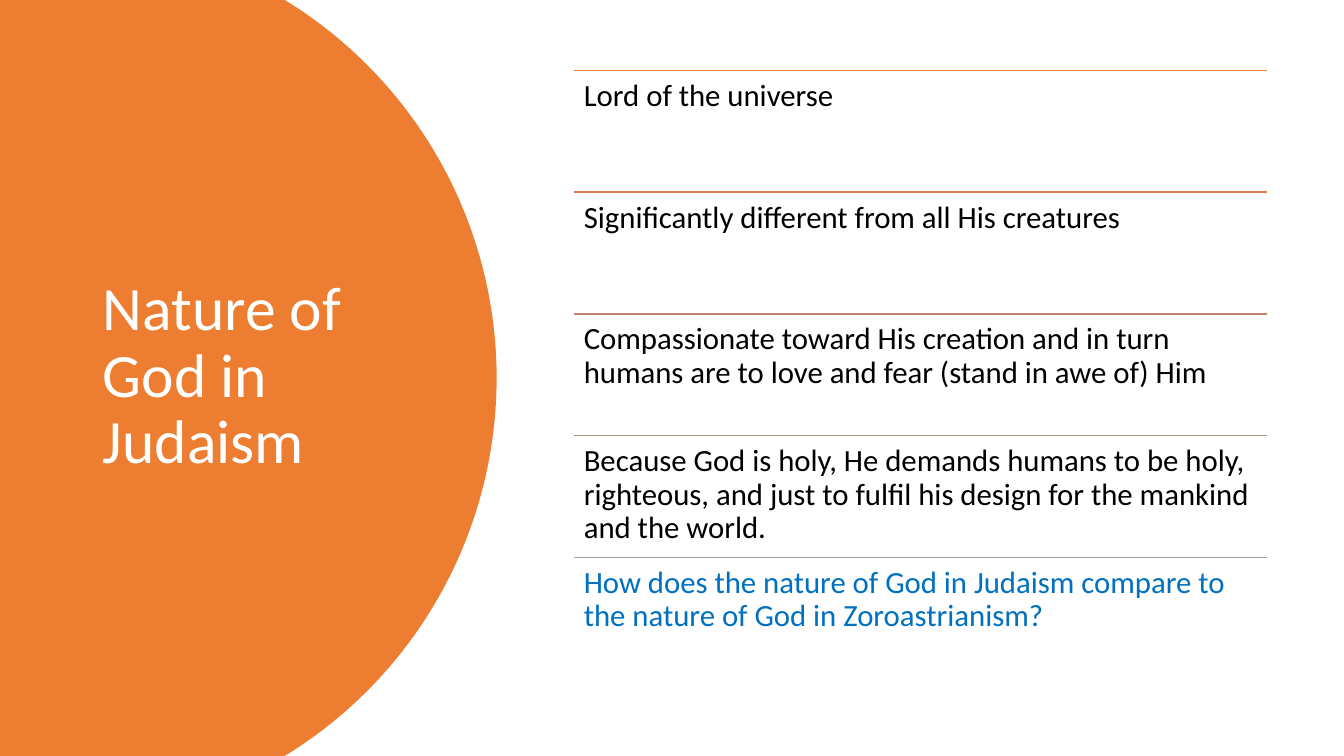
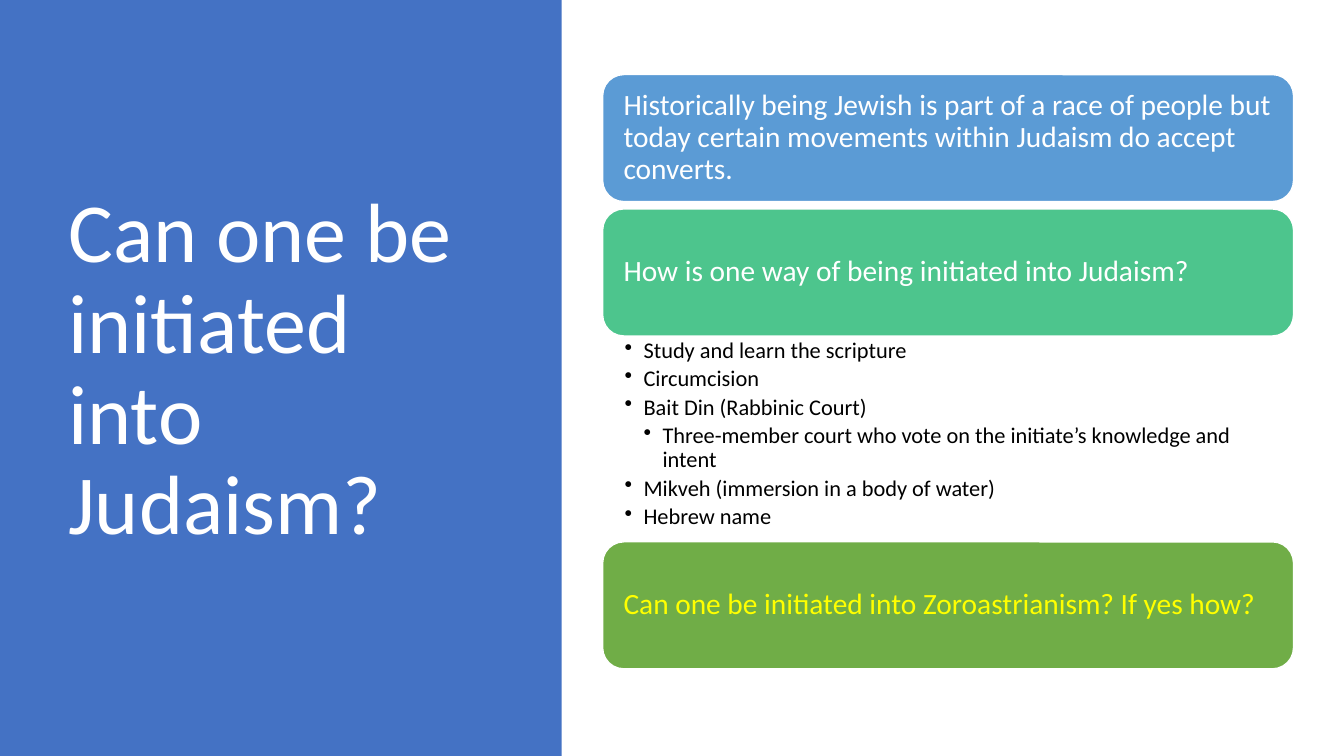
from math import asin, cos, sin

from lxml import etree
from pptx import Presentation
from pptx.dml.color import RGBColor
from pptx.enum.shapes import MSO_CONNECTOR, MSO_SHAPE
from pptx.enum.text import MSO_ANCHOR, MSO_AUTO_SIZE, PP_ALIGN
from pptx.oxml.ns import qn
from pptx.util import Emu, Pt

LINE = MSO_CONNECTOR.STRAIGHT
RECT = MSO_SHAPE.RECTANGLE
ROUND = MSO_SHAPE.ROUNDED_RECTANGLE
TOP = MSO_ANCHOR.TOP
MIDDLE = MSO_ANCHOR.MIDDLE
FIXED = MSO_AUTO_SIZE.NONE
LEFT = PP_ALIGN.LEFT

FONT = "Calibri"
WHITE = RGBColor(0xFF, 0xFF, 0xFF)
BLACK = RGBColor(0x00, 0x00, 0x00)
ORANGE = RGBColor(0xED, 0x7D, 0x31)
RUST = RGBColor(0xD8, 0x7A, 0x51)
CLAY = RGBColor(0xC4, 0x81, 0x70)
MAUVE = RGBColor(0xB4, 0x90, 0x8B)
GRAY = RGBColor(0xA5, 0xA5, 0xA5)
INK = RGBColor(0x00, 0x70, 0xC0)
BLUE = RGBColor(0x44, 0x72, 0xC4)
SKY = RGBColor(0x5B, 0x9B, 0xD5)
MINT = RGBColor(0x4D, 0xC5, 0x8D)
GREEN = RGBColor(0x70, 0xAD, 0x47)
YELLOW = RGBColor(0xFF, 0xFF, 0x00)

WIDTH, HEIGHT = 1280, 720
INDENT = 18

TRAITS = [
    ("Lord of the universe", ORANGE, BLACK),
    ("Significantly different from all His creatures", RUST, BLACK),
    ("Compassionate toward His creation and in turn humans are to love "
     "and fear (stand in awe of) Him", CLAY, BLACK),
    ("Because God is holy, He demands humans to be holy, righteous, and just "
     "to fulfil his design for the mankind and the world.", MAUVE, BLACK),
    ("How does the nature of God in Judaism compare to the nature of God "
     "in Zoroastrianism?", GRAY, INK),
]
STEPS = [
    ("Study and learn the scripture", 0),
    ("Circumcision", 0),
    ("Bait Din (Rabbinic Court)", 0),
    ("Three-member court who vote on the initiate’s knowledge and intent", 1),
    ("Mikveh (immersion in a body of water)", 0),
    ("Hebrew name", 0),
]


def px(count):
    return Emu(round(count * 9525))


def place(left, top, width, height):
    return px(left), px(top), px(width), px(height)


def bullet(para, level):
    para.level = level
    props = para._p.get_or_add_pPr()
    props.set("marL", str(px(INDENT * (level + 1))))
    props.set("indent", str(-px(INDENT)))
    etree.SubElement(props, qn("a:buChar")).set("char", "•")


def write(shape, items, size, color=BLACK, anchor=TOP, inset=(9, 9, 9, 9), after=0):
    frame = shape.text_frame
    frame.word_wrap = True
    frame.auto_size = FIXED
    frame.vertical_anchor = anchor
    (frame.margin_left, frame.margin_top,
     frame.margin_right, frame.margin_bottom) = map(px, inset)
    if isinstance(items, str):
        items = [(items, None)]
    for index, (text, level) in enumerate(items):
        para = frame.add_paragraph() if index else frame.paragraphs[0]
        if level is not None:
            bullet(para, level)
        para.alignment = LEFT
        para.line_spacing = 0.9
        para.space_before = Pt(0)
        para.space_after = Pt(after)
        run = para.add_run()
        run.text = text
        run.font.name = FONT
        run.font.size = Pt(size)
        run.font.color.rgb = color


def paint(shape, fill, edge=None):
    shape.shadow.inherit = False
    shape.fill.solid()
    shape.fill.fore_color.rgb = fill
    if edge is None:
        shape.line.fill.background()
    else:
        shape.line.color.rgb = edge
        shape.line.width = Pt(1)


def head(slide, panel, text, size, box):
    title = slide.shapes.title
    title.left, title.top, title.width, title.height = place(*box)
    write(title, text, size, color=WHITE, anchor=MIDDLE, inset=(10, 5, 10, 5))
    title.element.addprevious(panel.element)


def dome(slide, center, radius, fill):
    half = HEIGHT / 2
    limit = asin(half / radius)
    turns = [limit * step / 40 for step in range(-40, 41)]
    curve = [(px(center + radius * cos(turn)), px(half + radius * sin(turn)))
             for turn in turns]
    form = slide.shapes.build_freeform(0, 0)
    form.add_line_segments(curve + [(0, px(HEIGHT))], close=True)
    shape = form.convert_to_shape()
    paint(shape, fill)
    return shape


def block(slide, kind, box, fill, edge=None):
    shape = slide.shapes.add_shape(kind, *place(*box))
    paint(shape, fill, edge)
    return shape


def rule(slide, left, top, width, color):
    line = slide.shapes.add_connector(
        LINE, px(left), px(top), px(left + width), px(top))
    line.line.color.rgb = color
    line.line.width = Pt(1)
    etree.SubElement(line.element.spPr, qn("a:effectLst"))


def note(slide, box, items, size, **style):
    write(slide.shapes.add_textbox(*place(*box)), items, size, **style)


def band(slide, top, text, fill, color=WHITE):
    shape = block(slide, ROUND, (574, top, 658, 121), fill, WHITE)
    write(shape, text, 21, color=color, anchor=MIDDLE, inset=(14, 14, 14, 14))


def nature(slide):
    panel = dome(slide, 51, 422, ORANGE)
    head(slide, panel, "Nature of God in Judaism", 44, (88, 67, 310, 585))
    left, width, pitch = 547, 660, 116
    for index, (text, tint, color) in enumerate(TRAITS):
        top = 67 + index * pitch
        rule(slide, left, top, width, tint)
        note(slide, (left, top, width, pitch), text, 22, color=color)


def entry(slide):
    panel = block(slide, RECT, (0, 0, 535, HEIGHT), BLUE)
    head(slide, panel, "Can one be initiated into Judaism?", 60, (55, 65, 399, 578))
    band(slide, 71, "Historically being Jewish is part of a race of people but today "
         "certain movements within Judaism do accept converts.", SKY)
    band(slide, 199, "How is one way of being initiated into Judaism?", MINT)
    note(slide, (574, 320, 658, 196), STEPS, 16, inset=(21, 3, 15, 3), after=3)
    band(slide, 516, "Can one be initiated into Zoroastrianism? If yes how?",
         GREEN, YELLOW)


def main():
    deck = Presentation()
    deck.slide_width, deck.slide_height = px(WIDTH), px(HEIGHT)
    for build in (nature, entry):
        build(deck.slides.add_slide(deck.slide_layouts[5]))
    deck.save("out.pptx")


if __name__ == "__main__":
    main()
